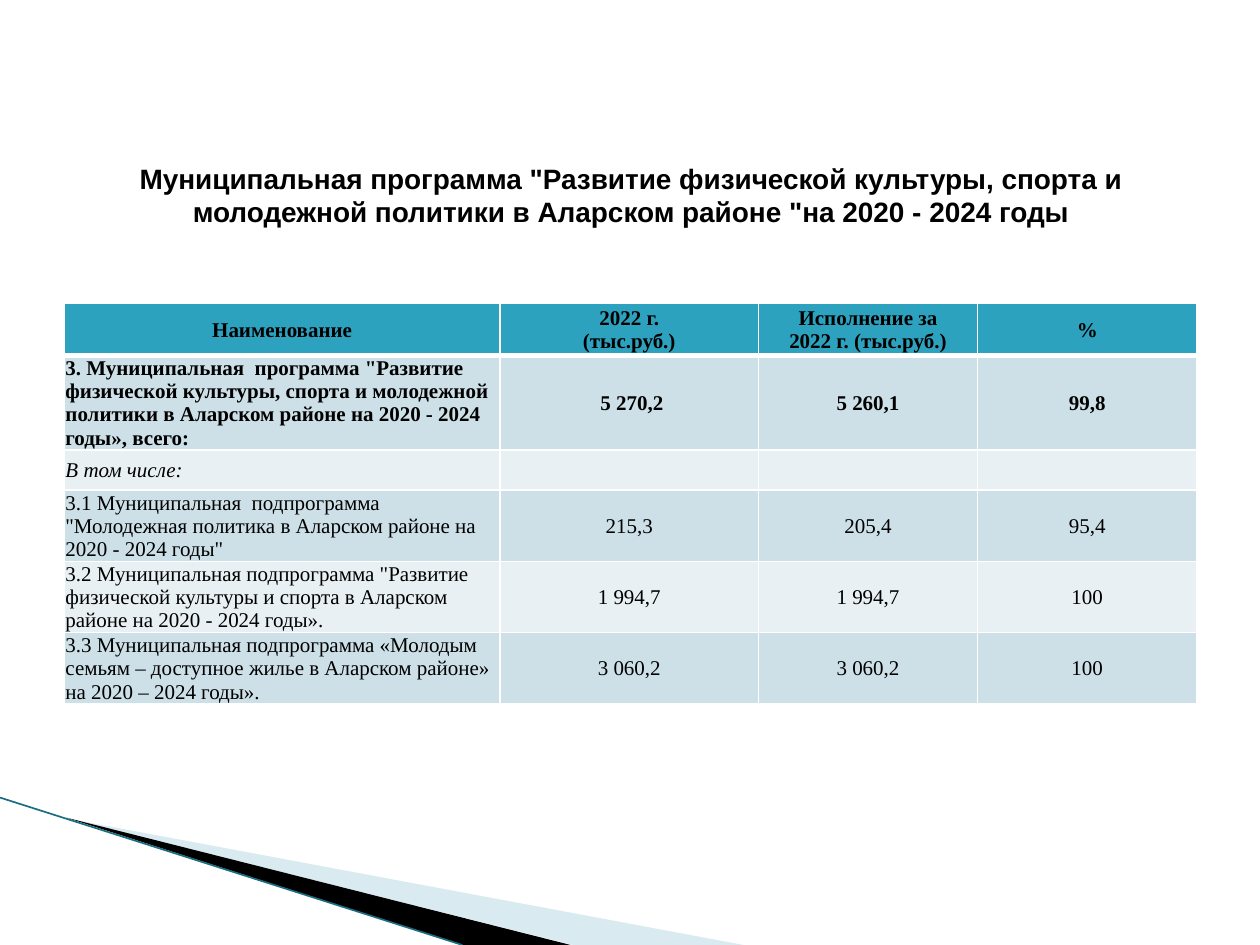
import pptx
import pptx.util
import pptx.dml.color
import pptx.enum.text
import pptx.enum.shapes
import pptx.oxml
import pptx.oxml.ns
import lxml.etree
from dataclasses import dataclass

Inches = pptx.util.Inches
Pt = pptx.util.Pt
RGB = pptx.dml.color.RGBColor.from_string
qn = pptx.oxml.ns.qn
CENTER = pptx.enum.text.PP_ALIGN.CENTER
LEFT = pptx.enum.text.PP_ALIGN.LEFT
MIDDLE = pptx.enum.text.MSO_ANCHOR.MIDDLE


@dataclass(frozen=True)
class Theme:
    ink: str = "000000"
    header: str = "2DA2BF"
    bands: tuple = ("CDE0E8", "E8F0F4")
    border: str = "FFFFFF"
    wedge: str = "A0CBDC"
    edge: str = "1B6E82"
    title_font: str = "Arial"
    table_font: str = "Times New Roman"
    title_size: int = 16
    table_size: int = 12


class SlideBuilder:
    def __init__(self, slide, theme):
        self.s = slide
        self.theme = theme

    def add_text(self, tf, text, align, **fmt):
        for i, line in enumerate(text.split("\n")):
            p = tf.paragraphs[0] if i == 0 else tf.add_paragraph()
            p.alignment = align
            if not line:
                continue
            r = p.add_run()
            r.text = line
            r.font.color.rgb = RGB(self.theme.ink)
            for name, value in fmt.items():
                setattr(r.font, name, value)

    def wedge(self, points, color, alpha=None):
        pts = [(Inches(x), Inches(y)) for x, y in points]
        fb = self.s.shapes.build_freeform(*pts[0])
        fb.add_line_segments(pts[1:], close=True)
        sp = fb.convert_to_shape()
        sp.shadow.inherit = False
        sp.fill.solid()
        sp.fill.fore_color.rgb = RGB(color)
        sp.line.fill.background()
        if alpha is not None:
            clr = sp._element.spPr.find(qn("a:solidFill")).find(qn("a:srgbClr"))
            lxml.etree.SubElement(clr, qn("a:alpha"), val=str(alpha * 1000))

    def line(self, start, end, color, width):
        ends = [Inches(v) for v in (*start, *end)]
        cx = self.s.shapes.add_connector(pptx.enum.shapes.MSO_CONNECTOR.STRAIGHT, *ends)
        cx.line.color.rgb = RGB(color)
        cx.line.width = Pt(width)
        lxml.etree.SubElement(cx._element.spPr, qn("a:effectLst"))

    def title(self, text, box):
        tf = self.s.shapes.add_textbox(*map(Inches, box)).text_frame
        tf.word_wrap = True
        tf.vertical_anchor = MIDDLE
        self.add_text(tf, text, CENTER, name=self.theme.title_font,
                      size=Pt(self.theme.title_size), bold=True)

    def borders(self, cell, widths):
        tcPr = cell._tc.get_or_add_tcPr()
        for i, (side, width) in enumerate(widths.items()):
            ln = pptx.oxml.parse_xml(
                f'<a:{side} {pptx.oxml.ns.nsdecls("a")} w="{Pt(width)}"><a:solidFill>'
                f'<a:srgbClr val="{self.theme.border}"/></a:solidFill></a:{side}>')
            tcPr.insert(i, ln)

    def table(self, rows, left, top, widths, heights):
        box = map(Inches, (left, top, sum(widths), sum(heights)))
        tbl = self.s.shapes.add_table(len(rows), len(widths), *box).table
        for col, width in zip(tbl.columns, widths):
            col.width = Inches(width)
        for row, height in zip(tbl.rows, heights):
            row.height = Inches(height)
        margins = {"margin_left": 0.01, "margin_top": 0.01,
                   "margin_right": 0.01, "margin_bottom": 0}
        for i, texts in enumerate(rows):
            color = self.theme.bands[(i - 1) % 2] if i else self.theme.header
            for j, text in enumerate(texts):
                cell = tbl.cell(i, j)
                for name, value in margins.items():
                    setattr(cell, name, Inches(value))
                cell.vertical_anchor = MIDDLE
                cell.fill.solid()
                cell.fill.fore_color.rgb = RGB(color)
                self.borders(cell, {"lnL": 1, "lnR": 1, "lnT": 3 if i == 1 else 1,
                                    "lnB": 1 if i else 3})
                self.add_text(cell.text_frame, text, LEFT if i and j == 0 else CENTER,
                              name=self.theme.table_font, size=Pt(self.theme.table_size),
                              bold=i < 2, italic=i == 2)


ROWS = [
    ["Наименование", "2022 г.\n(тыс.руб.)", "Исполнение за\n2022 г. (тыс.руб.)", "%"],
    ['3. Муниципальная  программа "Развитие физической культуры, спорта и молодежной '
     'политики в Аларском районе на 2020 - 2024 годы», всего:',
     " 5 270,2", "5 260,1", "99,8"],
    ["В том числе:", "", "", ""],
    ['3.1 Муниципальная  подпрограмма "Молодежная политика в Аларском районе на '
     '2020 - 2024 годы"', "215,3", "205,4", "95,4"],
    ['3.2 Муниципальная подпрограмма "Развитие физической культуры и спорта в Аларском '
     'районе на 2020 - 2024 годы».', "1 994,7", "1 994,7", "100"],
    ["3.3 Муниципальная подпрограмма «Молодым семьям – доступное жилье в Аларском районе» "
     "на 2020 – 2024 годы».", "3 060,2", "3 060,2", "100"],
]


def main():
    prs = pptx.Presentation()
    prs.slide_width, prs.slide_height = Inches(10), Inches(7.5)
    theme = Theme()
    b = SlideBuilder(prs.slides.add_slide(prs.slide_layouts[6]), theme)
    b.wedge([(0.55, 6.5), (5.9, 7.5), (4.55, 7.5)], theme.wedge, 40)
    b.wedge([(0.53, 6.49), (4.53, 7.5), (3.67, 7.5)], theme.ink)
    b.line((0, 6.33), (3.67, 7.5), theme.edge, 0.95)
    b.table(ROWS, 0.51, 2.41, [3.46, 2.05, 1.74, 1.74],
            [0.41, 0.74, 0.32, 0.56, 0.56, 0.56])
    b.title('Муниципальная программа "Развитие физической культуры, спорта и молодежной '
            'политики в Аларском районе "на 2020 - 2024 годы', (0.51, 0.92, 9, 1.25))
    prs.save("out.pptx")


if __name__ == "__main__":
    main()
